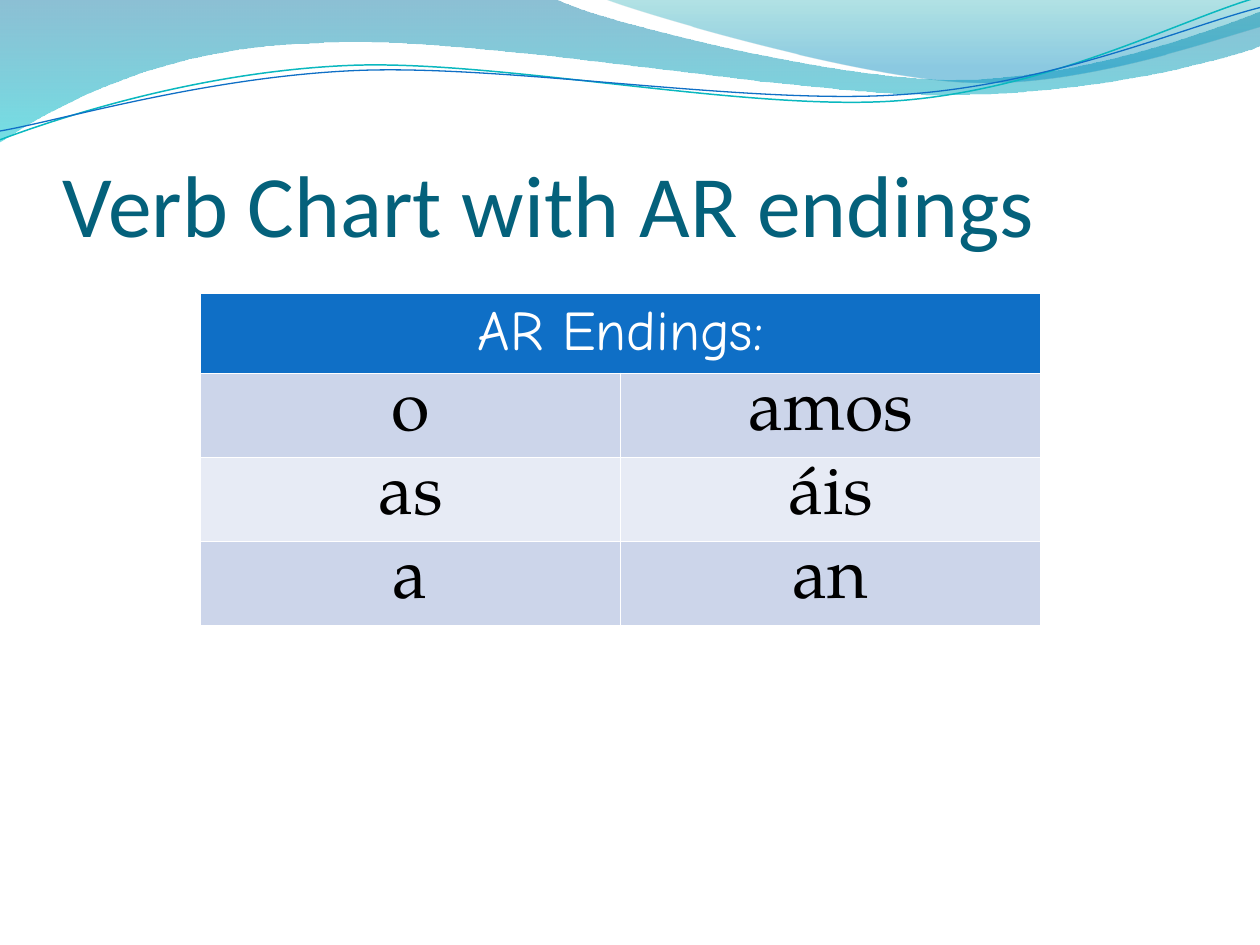
from lxml.etree import SubElement
from pptx import Presentation
from pptx.dml.color import RGBColor
from pptx.enum.text import MSO_ANCHOR as Anchor, PP_ALIGN as Align
from pptx.oxml.ns import qn
from pptx.util import Inches, Pt

# Content
TITLE = "Verb Chart with AR endings"
HEADER = "AR Endings:"
ENDINGS = [("o", "amos"), ("as", "áis"), ("a", "an")]
BANDS = ["CCD5EA", "E7EBF5"]

# Outlines in inches: a pair is a straight step, six numbers a Bézier curve.
# Gradient stops run from top to bottom: colour, opacity in percent, position.
WAVES = [
    ([(0, 0), (4.4, -0.01), (4.76, 0.17, 6.64, 0.63, 7.58, 0.63),
      (8.53, 0.63, 9.58, 0.26, 10, 0.09), (10.01, 0.36),
      (9.83, 0.44, 8.7, 0.76, 7.46, 0.75), (6.22, 0.75, 3.82, 0.28, 2.57, 0.34),
      (1.29, 0.36, 0.46, 0.83, -0.01, 1.13)],
     [("0074A1", 45, 0), ("00C6CF", 55, 1)]),
    ([(4.79, -0.01), (5.09, 0.11, 6.82, 0.62, 7.69, 0.65),
      (8.56, 0.69, 9.61, 0.32, 10, 0.21), (10, 0)],
     [("00A1A9", 30, 0), ("008BBF", 45, 0.8)]),
]
LINES = [
    ([(0, 1.11), (0.48, 0.93, 1.58, 0.57, 2.77, 0.52),
      (3.95, 0.47, 5.93, 0.89, 7.13, 0.8), (8.33, 0.71, 9.38, 0.15, 9.98, -0.02)],
     "0AB8BF", 0.85),
    ([(0, 1.04), (0.47, 0.96, 1.64, 0.61, 2.83, 0.56),
      (4.03, 0.51, 5.97, 0.84, 7.17, 0.75), (8.36, 0.67, 9.41, 0.21, 10, 0.06)],
     "0F6FC6", 0.75),
]


def rgb(value):
    return RGBColor.from_string(value)


def add_outline(page, outline, close):
    """Build the outline from its end points, then bend the curved steps."""
    ends = [(Inches(step[-2]), Inches(step[-1])) for step in outline]
    builder = page.shapes.build_freeform(*ends[0])
    builder.add_line_segments(ends[1:], close=close)
    shape = builder.convert_to_shape()
    shape.shadow.inherit = False
    segments = list(shape._element.spPr.iter(qn("a:lnTo")))
    for segment, step in zip(segments, outline[1:]):
        if len(step) == 2:
            continue
        segment.tag = qn("a:cubicBezTo")
        segment.clear()
        for x, y in zip(step[::2], step[1::2]):
            SubElement(segment, qn("a:pt"), x=str(Inches(x) - shape.left),
                       y=str(Inches(y) - shape.top))
    return shape


def add_wave(page, outline, stops):
    wave = add_outline(page, outline, True)
    wave.line.fill.background()
    wave.fill.gradient()
    wave.fill.gradient_angle = 270
    for stop, (color, _, position) in zip(wave.fill.gradient_stops, stops):
        stop.color.rgb = rgb(color)
        stop.position = position
    colors = wave._element.spPr.iter(qn("a:srgbClr"))
    for node, (_, opacity, _) in zip(colors, stops):
        SubElement(node, qn("a:alpha"), val=str(opacity * 1000))


def add_line(page, outline, color, width):
    line = add_outline(page, outline, False)
    line.fill.background()
    line.line.color.rgb = rgb(color)
    line.line.width = Pt(width)


def set_font(para, name, size, color):
    font = para.font
    font.name, font.size, font.bold = name, Pt(size), False
    font.color.rgb = rgb(color)


def style_cell(cell, fill):
    props = cell._tc.get_or_add_tcPr()
    for side in "LRTB":
        border = SubElement(props, qn(f"a:ln{side}"), w=str(Pt(1)))
        solid = SubElement(border, qn("a:solidFill"))
        SubElement(solid, qn("a:srgbClr"), val="FFFFFF")
    cell.fill.solid()
    cell.fill.fore_color.rgb = rgb(fill)


def write_cell(cell, text, font):
    cell.text = text
    para = cell.text_frame.paragraphs[0]
    para.alignment = Align.CENTER
    set_font(para, *font)


deck = Presentation()
deck.slide_width, deck.slide_height = Inches(10), Inches(7.5)
page = deck.slides.add_slide(deck.slide_layouts[6])

# Wave decoration
for wave in WAVES:
    add_wave(page, *wave)
for line in LINES:
    add_line(page, *line)

# Title
box = page.shapes.add_textbox(Inches(0.5), Inches(0.77), Inches(9), Inches(1.25))
frame = box.text_frame
frame.word_wrap = True
frame.vertical_anchor = Anchor.BOTTOM
frame.margin_left = frame.margin_right = frame.margin_bottom = 0
frame.margin_top = Inches(0.05)
frame.text = TITLE
set_font(frame.paragraphs[0], "Calibri", 50, "04617B")

# Endings table
table = page.shapes.add_table(len(ENDINGS) + 1, 2, Inches(1.59), Inches(2.33),
                              Inches(6.67), Inches(1.78)).table
for i, row in enumerate(table.rows):
    row.height = Inches(0.41 if i else 0.55)
header = table.cell(0, 0)
header.merge(table.cell(0, 1))
write_cell(header, HEADER, ("Comic Neue", 32, "FFFFFF"))
for col in range(2):
    style_cell(table.cell(0, col), "0F6FC6")
for i, endings in enumerate(ENDINGS):
    for col, text in enumerate(endings):
        cell = table.cell(i + 1, col)
        write_cell(cell, text, ("TeX Gyre Pagella", 40, "000000"))
        style_cell(cell, BANDS[i % 2])
        cell.margin_bottom = Inches(-0.05)  # offsets the font's deep line

deck.save("out.pptx")
